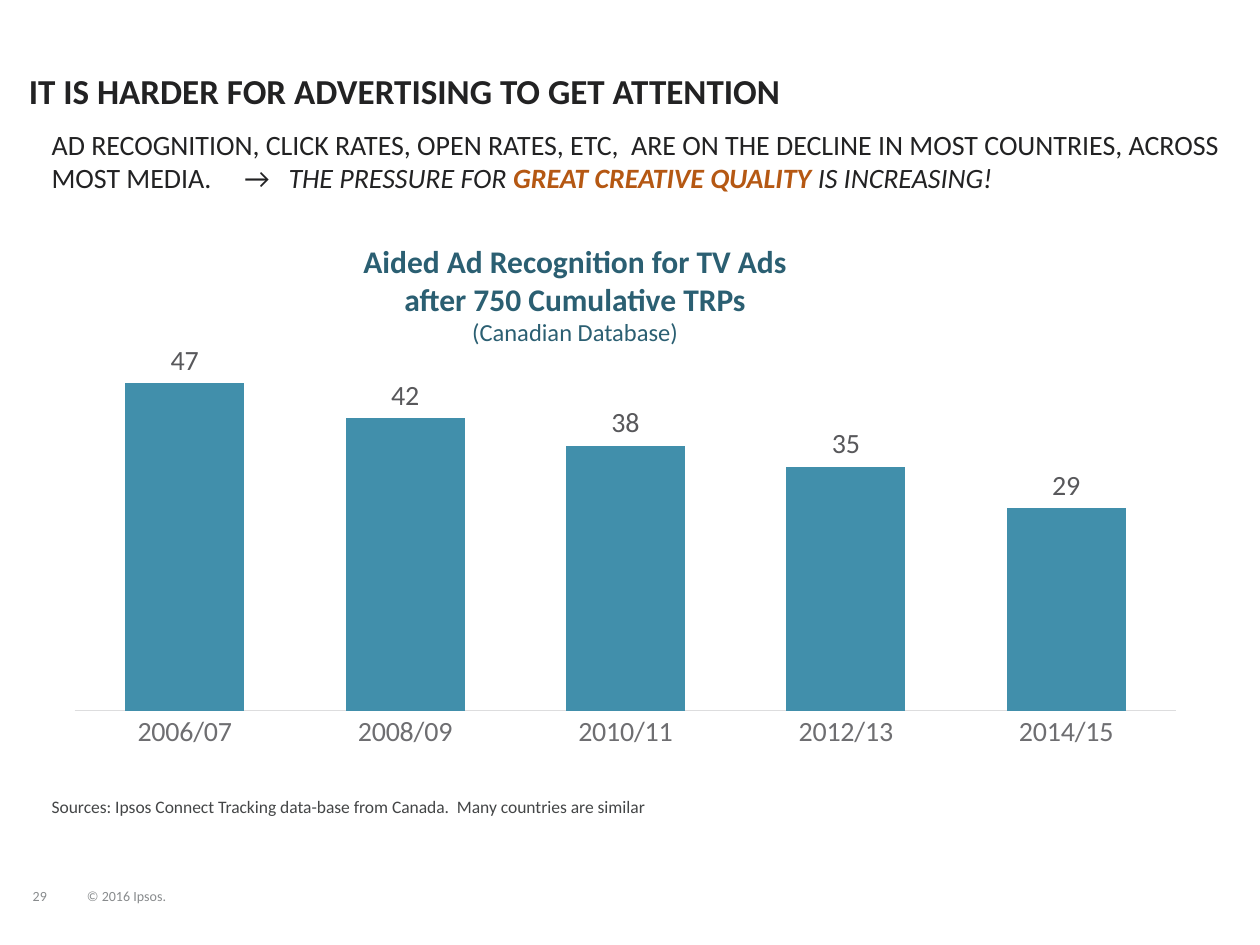
from lxml import etree
from pptx import Presentation
from pptx.chart.data import CategoryChartData as Data
from pptx.dml.color import RGBColor
from pptx.enum.chart import XL_CHART_TYPE as Kind, XL_LABEL_POSITION as Spot, XL_TICK_MARK as Tick
from pptx.enum.text import MSO_ANCHOR as Anchor, PP_ALIGN as Align
from pptx.oxml.ns import qn
from pptx.util import Inches, Pt

FACE = "Calibri"
DARK, TEAL, BLUE, RUST, GREY = "222223", "2B5F72", "418FAB", "B55813", "888B8D"


def color(code):
    return RGBColor.from_string(code)


def style(font, size, code, bold=False, italic=False):
    font.name, font.size = FACE, Pt(size)
    font.bold, font.italic = bold, italic
    font.color.rgb = color(code)


def add_text(slide, box, lines, anchor=Anchor.TOP, wrap=True, inset=0):
    """Each line is a list of runs: text, size, color, then bold and italic."""
    frame = slide.shapes.add_textbox(*map(Inches, box)).text_frame
    frame.word_wrap, frame.vertical_anchor = wrap, anchor
    frame.margin_left = frame.margin_right = Inches(inset)
    frame.margin_top = frame.margin_bottom = Inches(inset / 2)
    for i, runs in enumerate(lines):
        para = frame.add_paragraph() if i else frame.paragraphs[0]
        for words, *look in runs:
            run = para.add_run()
            run.text = words
            style(run.font, *look)
    return frame.paragraphs


def add_head(slide, box):
    text = "IT IS HARDER FOR ADVERTISING TO GET ATTENTION"
    add_text(slide, box, [[(text, 20, DARK, True)]], inset=0.1)


def add_lead(slide, box):
    para = add_text(slide, box, [[
        ("AD RECOGNITION, CLICK RATES, OPEN RATES, ETC,  ARE ON THE DECLINE "
         "IN MOST COUNTRIES, ACROSS MOST MEDIA.\t→\t", 16, DARK),
        ("THE PRESSURE FOR ", 16, DARK, False, True),
        ("GREAT CREATIVE QUALITY ", 16, RUST, True, True),
        ("IS INCREASING!", 16, DARK, False, True),
    ]])[0]
    # Tab stops on either side of the arrow
    stops = etree.SubElement(para._p.get_or_add_pPr(), qn("a:tabLst"))
    for pos in (1.53, 1.88):
        etree.SubElement(stops, qn("a:tab"), pos=str(Inches(pos)), algn="l")


def add_label(slide, box):
    paras = add_text(slide, box, [
        [("Aided Ad Recognition for TV Ads", 18, TEAL, True)],
        [("after 750 Cumulative TRPs", 18, TEAL, True)],
        [("(Canadian Database)", 14, TEAL)],
    ])
    for para in paras:
        para.alignment = Align.CENTER


def add_bars(slide, box):
    data = Data()
    data.categories = ["2006/07", "2008/09", "2010/11", "2012/13", "2014/15"]
    data.add_series("Series 1", (47, 42, 38, 35, 29))
    chart = slide.shapes.add_chart(
        Kind.COLUMN_CLUSTERED, *map(Inches, box), data).chart
    chart.has_legend = chart.has_title = False
    style(chart.font, 16, DARK)

    # Axes
    cat, val = chart.category_axis, chart.value_axis
    cat.major_tick_mark = cat.minor_tick_mark = Tick.NONE
    style(cat.tick_labels.font, 16, "6E6E71")
    cat.format.line.color.rgb = color("DDDDDE")
    cat.format.line.width = Pt(0.75)
    val.minimum_scale, val.maximum_scale = 0, 50
    val.has_major_gridlines = val.visible = False

    # Columns and their values
    plot = chart.plots[0]
    plot.gap_width, plot.overlap = 85, -16
    plot.vary_by_categories = False
    fill = plot.series[0].format.fill
    fill.solid()
    fill.fore_color.rgb = color(BLUE)
    plot.has_data_labels = True
    labels = plot.data_labels
    labels.show_value, labels.position = True, Spot.OUTSIDE_END
    style(labels.font, 16, "58585B")

    # Inner plot area as shares of the chart box
    area = chart._chartSpace.find(".//" + qn("c:plotArea"))
    for old in area.findall(qn("c:layout")):
        area.remove(old)
    layout = etree.Element(qn("c:layout"))
    area.insert(0, layout)
    manual = etree.SubElement(layout, qn("c:manualLayout"))
    parts = [("layoutTarget", "inner"), ("xMode", "edge"), ("yMode", "edge"),
             ("x", 0.02), ("y", 0.04), ("w", 0.96), ("h", 0.85)]
    for name, value in parts:
        etree.SubElement(manual, qn("c:" + name), val=str(value))


def add_source(slide, box):
    text = "Sources: Ipsos Connect Tracking data-base from Canada.  Many countries are similar"
    para = add_text(slide, box, [[(text, 10, "444647")]], Anchor.BOTTOM)[0]
    para.line_spacing = 0.9


def add_foot(slide, box):
    left, top, width, height = box
    cells = [("29", (left, top, 0.34, height)),
             ("© 2016 Ipsos.", (left + 0.43, top, width - 0.43, height))]
    for text, cell in cells:
        para = add_text(slide, cell, [[(text, 8, GREY)]], Anchor.BOTTOM, False)[0]
        para.line_spacing = 0.85


def main():
    deck = Presentation()
    deck.slide_width, deck.slide_height = Inches(10), Inches(7.5)
    slide = deck.slides.add_slide(deck.slide_layouts[6])
    add_foot(slide, (0.26, 6.83, 1.19, 0.35))
    add_head(slide, (0.13, 0.5, 9.08, 0.81))
    add_source(slide, (0.41, 6.14, 5.31, 0.35))
    add_bars(slide, (0.41, 2.73, 9.11, 3.27))
    add_label(slide, (1.9, 1.92, 5.33, 0.84))
    add_lead(slide, (0.41, 1.01, 9.31, 0.71))
    deck.save("out.pptx")


if __name__ == "__main__":
    main()
